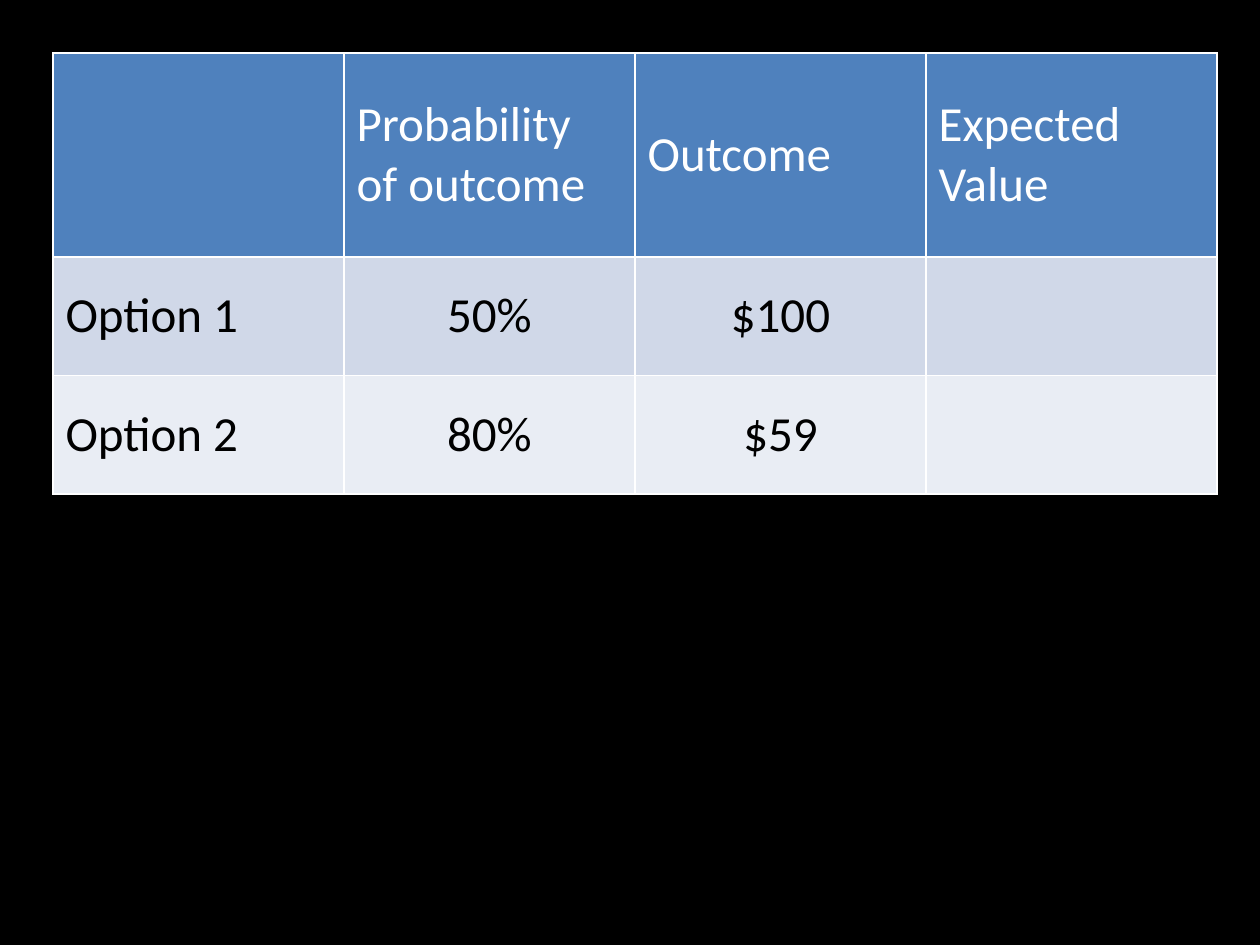
from lxml import etree
from pptx import Presentation
from pptx.dml.color import RGBColor
from pptx.enum.text import MSO_ANCHOR, PP_ALIGN
from pptx.oxml.ns import qn
from pptx.util import Inches, Pt

MIDDLE = MSO_ANCHOR.MIDDLE
LEFT, CENTER = PP_ALIGN.LEFT, PP_ALIGN.CENTER

BLACK, WHITE = "000000", "FFFFFF"
HEADER_FILL = "4F81BD"
BAND_FILLS = ("D0D8E8", "E9EDF4")


def color(hex_value):
    return RGBColor.from_string(hex_value)


class SlideBuilder:
    font_name = "Calibri"
    font_size = Pt(28)
    border_width = Pt(1)

    def __init__(self, slide):
        self.slide = slide

    def background(self, hex_value):
        fill = self.slide.background.fill
        fill.solid()
        fill.fore_color.rgb = color(hex_value)

    def table(self, left, top, column_width, row_heights, rows):
        columns = len(rows[0])
        table = self.slide.shapes.add_table(
            len(rows), columns, Inches(left), Inches(top),
            Inches(column_width * columns), Inches(sum(row_heights))).table
        for column in table.columns:
            column.width = Inches(column_width)
        for r, (height, texts) in enumerate(zip(row_heights, rows)):
            table.rows[r].height = Inches(height)
            fill = BAND_FILLS[(r - 1) % 2] if r else HEADER_FILL
            for c, text in enumerate(texts):
                self.cell(table.cell(r, c), text, fill,
                          BLACK if r else WHITE,
                          CENTER if r and c else LEFT)

    def cell(self, cell, text, fill, text_color, align):
        cell.text = text
        cell.vertical_anchor = MIDDLE
        paragraph = cell.text_frame.paragraphs[0]
        paragraph.alignment = align
        font = paragraph.font
        font.name, font.size, font.bold = self.font_name, self.font_size, False
        font.color.rgb = color(text_color)
        self.borders(cell, WHITE)
        cell.fill.solid()
        cell.fill.fore_color.rgb = color(fill)

    def borders(self, cell, hex_value):
        properties = cell._tc.get_or_add_tcPr()
        for side in ("a:lnL", "a:lnR", "a:lnT", "a:lnB"):
            line = etree.SubElement(properties, qn(side), w=str(self.border_width))
            solid = etree.SubElement(line, qn("a:solidFill"))
            etree.SubElement(solid, qn("a:srgbClr"), val=hex_value)


def main():
    presentation = Presentation()
    presentation.slide_width = Inches(10)
    presentation.slide_height = Inches(7.5)
    builder = SlideBuilder(
        presentation.slides.add_slide(presentation.slide_layouts[6]))

    builder.background(BLACK)

    # Options with their probability and outcome
    builder.table(0.42, 0.42, 2.31, (1.62, 0.94, 0.94), (
        ("", "Probability of outcome", "Outcome", "Expected Value"),
        ("Option 1", "50%", "$100", ""),
        ("Option 2", "80%", "$59", ""),
    ))

    presentation.save("out.pptx")


if __name__ == "__main__":
    main()
